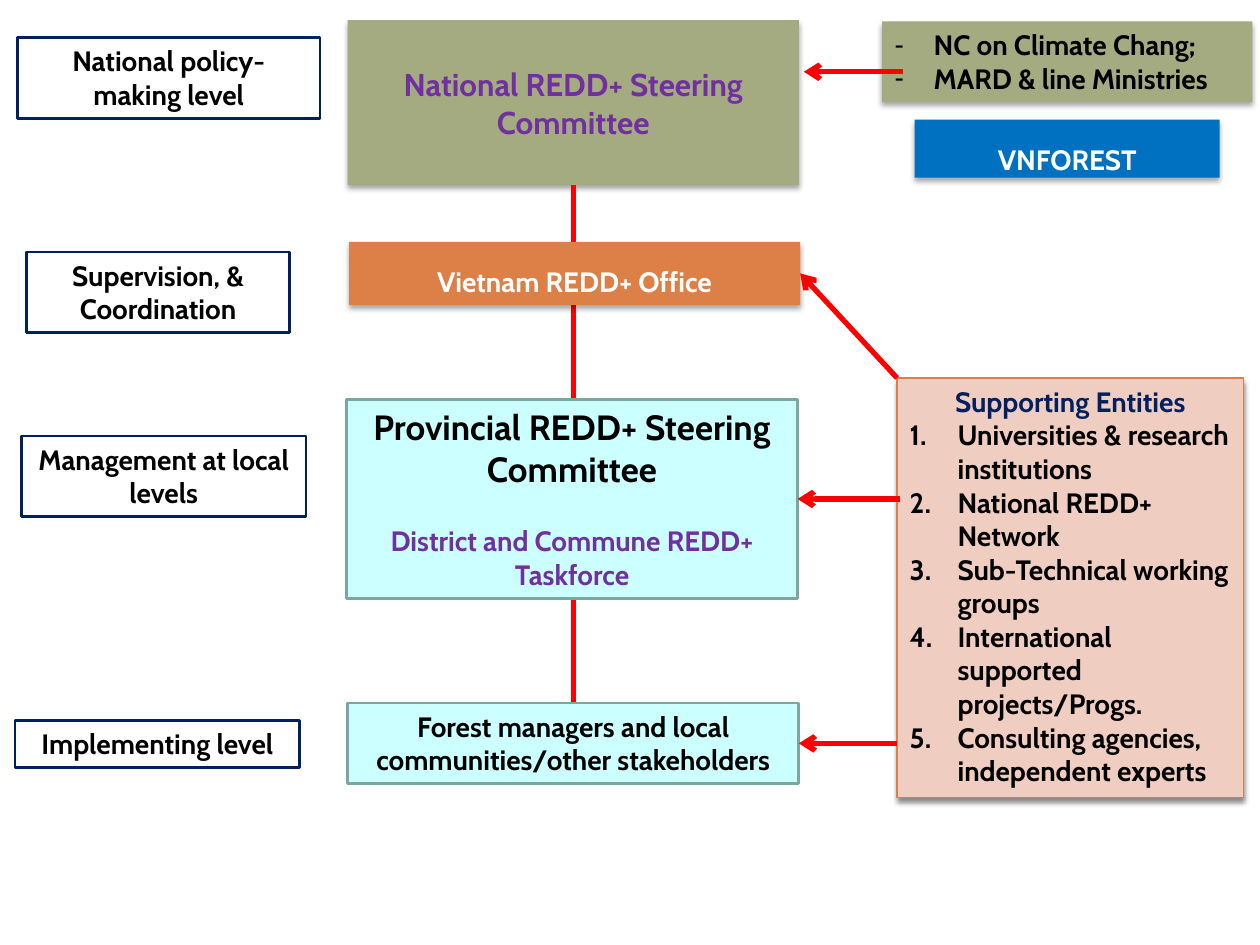
from dataclasses import dataclass
from typing import Optional

from lxml.etree import SubElement
from pptx import Presentation
from pptx.dml.color import RGBColor
from pptx.enum.shapes import MSO_CONNECTOR as Connector, MSO_SHAPE as Preset
from pptx.enum.text import MSO_ANCHOR as Anchor, MSO_AUTO_SIZE as AutoSize, PP_ALIGN as Align
from pptx.oxml.ns import qn
from pptx.util import Inches, Pt

BLACK = RGBColor(0x00, 0x00, 0x00)
WHITE = RGBColor(0xFF, 0xFF, 0xFF)
RED = RGBColor(0xFF, 0x00, 0x00)
PURPLE = RGBColor(0x70, 0x30, 0xA0)
NAVY = RGBColor(0x00, 0x20, 0x60)
BLUE = RGBColor(0x00, 0x70, 0xC0)
OLIVE = RGBColor(0xA5, 0xAB, 0x81)
ORANGE = RGBColor(0xDD, 0x80, 0x47)
PINK = RGBColor(0xEF, 0xCD, 0xC1)
AQUA = RGBColor(0xCC, 0xFF, 0xFF)
TEAL = RGBColor(0x7B, 0xA7, 0x9D)

FONT = "Cabin"
COLUMNS, ROWS = 100, 75
TOP, LEFT, BOTTOM, RIGHT = range(4)

deck = Presentation()
deck.slide_width, deck.slide_height = Inches(10), Inches(7.5)
COLUMN, ROW = deck.slide_width / COLUMNS, deck.slide_height / ROWS
slide = deck.slides.add_slide(deck.slide_layouts[3])
shapes = slide.shapes


@dataclass
class Line:
    text: str
    color: RGBColor = BLACK
    size: float = 16
    bullet: str = ""
    indent: float = 0
    spacing: float = 1
    before: float = 0


@dataclass
class Box:
    column: float
    row: float
    columns: float
    rows: float
    fill: RGBColor
    lines: list[Line]
    outline: Optional[RGBColor] = None
    outline_width: float = 1.5
    shadow: int = 0
    blur_distance: float = 2
    anchor: Anchor = Anchor.TOP
    placeholder: Optional[int] = None


def level(column: float, row: float, columns: float, rows: float, text: str) -> Box:
    return Box(column, row, columns, rows, WHITE, [Line(text)], NAVY)


def set_bullet(para, line: Line) -> None:
    properties = para._p.get_or_add_pPr()
    properties.set("marL", str(Inches(line.indent)))
    properties.set("indent", str(-Inches(line.indent)))
    if line.bullet == "1.":
        SubElement(properties, qn("a:buFont"), typeface=FONT)
        SubElement(properties, qn("a:buAutoNum"), type="arabicPeriod")
    elif line.bullet:
        SubElement(properties, qn("a:buChar"), char=line.bullet)
    else:
        SubElement(properties, qn("a:buNone"))


def write_lines(frame, lines: list[Line]) -> None:
    for index, line in enumerate(lines):
        para = frame.paragraphs[0] if index == 0 else frame.add_paragraph()
        layout = {"alignment": Align.LEFT if line.bullet else Align.CENTER,
                  "line_spacing": line.spacing,
                  "space_before": Pt(line.before), "space_after": Pt(0)}
        for name, value in layout.items():
            setattr(para, name, value)
        set_bullet(para, line)
        span = para.add_run()
        span.text = line.text
        for name, value in {"name": FONT, "size": Pt(line.size), "bold": True}.items():
            setattr(span.font, name, value)
        span.font.color.rgb = line.color


def add_shadow(shape, opacity: int, distance: float) -> None:
    effects = shape._element.spPr.find(qn("a:effectLst"))
    outer = SubElement(effects, qn("a:outerShdw"), blurRad=str(Pt(3)),
                       dist=str(Pt(distance)), dir="5400000", rotWithShape="0")
    color = SubElement(outer, qn("a:srgbClr"), val="000000")
    SubElement(color, qn("a:alpha"), val=str(opacity * 1000))


def draw_box(box: Box):
    place = [round(value) for value in (box.column * COLUMN, box.row * ROW,
                                        box.columns * COLUMN, box.rows * ROW)]
    if box.placeholder is None:
        shape = shapes.add_shape(Preset.RECTANGLE, *place)
    else:
        shape = slide.placeholders[box.placeholder]
        for name, value in zip(("left", "top", "width", "height"), place):
            setattr(shape, name, value)
    shape.fill.solid()
    shape.fill.fore_color.rgb = box.fill
    if box.outline is None:
        shape.line.fill.background()
    else:
        shape.line.color.rgb = box.outline
        shape.line.width = Pt(box.outline_width)
    shape.shadow.inherit = False
    if box.shadow:
        add_shadow(shape, box.shadow, box.blur_distance)
    frame = shape.text_frame
    settings = {"word_wrap": True, "auto_size": AutoSize.NONE, "vertical_anchor": box.anchor}
    for name, value in settings.items():
        setattr(frame, name, value)
    write_lines(frame, box.lines)
    return shape


def draw_line(start: tuple[float, float], end: tuple[float, float], arrow: bool = True):
    line = shapes.add_connector(Connector.STRAIGHT,
                                round(start[0] * COLUMN), round(start[1] * ROW),
                                round(end[0] * COLUMN), round(end[1] * ROW))
    line.line.color.rgb = RED
    line.line.width = Pt(3)
    if arrow:
        SubElement(line.line._get_or_add_ln(), qn("a:tailEnd"), type="arrow")
    SubElement(line._element.spPr, qn("a:effectLst"))
    return line


NATIONAL = Box(27.6, 1.6, 35.8, 13.1, OLIVE,
               [Line("National REDD+ Steering Committee", PURPLE, 18)],
               shadow=35, anchor=Anchor.MIDDLE, placeholder=0)
OFFICE = Box(27.7, 19.2, 35.8, 5, ORANGE,
             [Line("Vietnam REDD+ Office", WHITE, spacing=1.5)], shadow=35)
PROVINCIAL = Box(27.5, 31.7, 35.8, 15.8, AQUA,
                 [Line("Provincial REDD+ Steering Committee", size=20),
                  Line("District and Commune REDD+ Taskforce", PURPLE, before=19.5)], TEAL)
FOREST = Box(27.6, 55.8, 35.8, 6.4, AQUA,
             [Line("Forest managers and local communities/other stakeholders")], TEAL)
ENTITIES = ["Universities & research institutions", "National REDD+ Network",
            "Sub-Technical working groups", "International supported projects/Progs.",
            "Consulting agencies, independent experts"]
SUPPORT = Box(71.2, 30, 27.5, 33.3, PINK,
              [Line("Supporting Entities", NAVY)]
              + [Line(entity, bullet="1.", indent=0.38) for entity in ENTITIES],
              ORANGE, 0.79, shadow=45, blur_distance=2.4, placeholder=1)
MINISTRIES = Box(70, 1.7, 29.4, 6.4, OLIVE,
                 [Line(text, bullet="-", indent=0.31)
                  for text in ("NC on Climate Chang;", "MARD & line Ministries")],
                 shadow=35, placeholder=2)
FOREST_AGENCY = Box(72.6, 9.5, 24.2, 4.6, BLUE,
                    [Line("VNFOREST", WHITE, spacing=1.5)], shadow=35)
LEVELS = [
    level(1.4, 3, 24, 6.4, "National policy-making level"),
    level(2.1, 20, 20.9, 6.4, "Supervision, & Coordination"),
    level(1.7, 34.6, 22.6, 6.4, "Management at local levels"),
    level(1.2, 57.2, 22.6, 3.7, "Implementing level"),
]

spine = draw_line((45.5, 14.7), (45.5, 55.8), arrow=False)
national, office, provincial, forest = map(draw_box, (NATIONAL, OFFICE, PROVINCIAL, FOREST))
spine.begin_connect(national, BOTTOM)
spine.end_connect(forest, TOP)

for box in [SUPPORT, MINISTRIES, FOREST_AGENCY, *LEVELS]:
    draw_box(box)

for start, target in [((71.2, 30), office), ((71.4, 39.6), provincial), ((71.2, 59), forest)]:
    draw_line(start, start).end_connect(target, RIGHT)
draw_line((71.7, 5.7), (63.8, 5.7))

deck.save("out.pptx")
